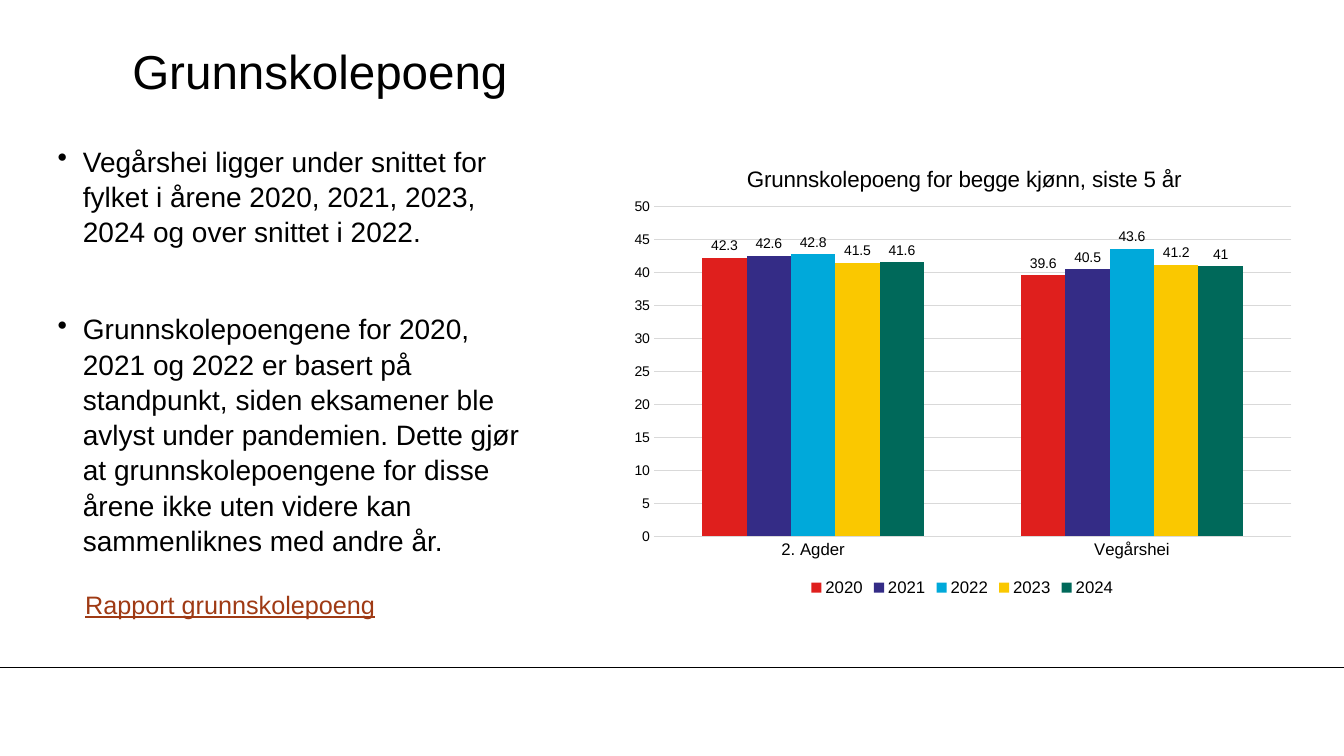
from lxml import etree
from pptx import Presentation
from pptx.chart.data import CategoryChartData
from pptx.dml.color import RGBColor
from pptx.enum.chart import XL_CHART_TYPE, XL_LABEL_POSITION, XL_LEGEND_POSITION, XL_TICK_MARK
from pptx.enum.shapes import MSO_CONNECTOR
from pptx.enum.text import MSO_ANCHOR
from pptx.oxml.ns import qn
from pptx.util import Emu, Pt

COLUMNS = XL_CHART_TYPE.COLUMN_CLUSTERED
OUTSIDE_END = XL_LABEL_POSITION.OUTSIDE_END
BOTTOM = XL_LEGEND_POSITION.BOTTOM
NO_TICKS = XL_TICK_MARK.NONE
STRAIGHT = MSO_CONNECTOR.STRAIGHT
TOP, MIDDLE = MSO_ANCHOR.TOP, MSO_ANCHOR.MIDDLE

BLACK = RGBColor(0x00, 0x00, 0x00)
GREY = RGBColor(0xD9, 0xD9, 0xD9)
RUST = RGBColor(0x9F, 0x3A, 0x14)
RED = RGBColor(0xDF, 0x1F, 0x1D)
INDIGO = RGBColor(0x34, 0x2C, 0x86)
BLUE = RGBColor(0x00, 0xA9, 0xDA)
YELLOW = RGBColor(0xFA, 0xC8, 0x00)
GREEN = RGBColor(0x00, 0x69, 0x5A)

DISTRICTS = ["2. Agder", "Vegårshei"]
YEARS = [
    ("2020", [42.3, 39.6], RED),
    ("2021", [42.6, 40.5], INDIGO),
    ("2022", [42.8, 43.6], BLUE),
    ("2023", [41.5, 41.2], YELLOW),
    ("2024", [41.6, 41], GREEN),
]
FINDINGS = [
    "Vegårshei ligger under snittet for fylket i årene 2020, 2021, 2023, "
    "2024 og over snittet i 2022.",
    "Grunnskolepoengene for 2020, 2021 og 2022 er basert på standpunkt, siden "
    "eksamener ble avlyst under pandemien. Dette gjør at grunnskolepoengene for "
    "disse årene ikke uten videre kan sammenliknes med andre år.",
]


def px(length):
    return Emu(length * 9525)


class SlideBuilder:
    font_name = "Arial"

    def __init__(self, slide):
        self.slide = slide

    def style(self, font, size, color=BLACK):
        font.name = self.font_name
        font.size = Pt(size)
        font.bold = False
        font.color.rgb = color

    def rule(self, left, right, y):
        divider = self.slide.shapes.add_connector(STRAIGHT, px(left), px(y), px(right), px(y))
        divider.line.color.rgb = BLACK
        divider.line.width = Pt(0.75)
        etree.SubElement(divider._element.spPr, qn("a:effectLst"))

    def frame(self, box, anchor=TOP, inset=0):
        frame = self.slide.shapes.add_textbox(*map(px, box)).text_frame
        frame.word_wrap = True
        frame.vertical_anchor = anchor
        frame.margin_left = frame.margin_right = px(inset)
        frame.margin_top = frame.margin_bottom = px(inset // 2)
        return frame

    def text(self, box, wording, size, color=BLACK, anchor=TOP, inset=0, underline=False):
        frame = self.frame(box, anchor, inset)
        frame.text = wording
        run = frame.paragraphs[0].runs[0]
        self.style(run.font, size, color)
        run.font.underline = underline

    def bullets(self, box, points, size, gap):
        frame = self.frame(box)
        frame.text = "\n".join(points)
        for index, paragraph in enumerate(frame.paragraphs):
            properties = paragraph._p.get_or_add_pPr()
            properties.set("marL", str(px(24)))
            properties.set("indent", str(px(-24)))
            etree.SubElement(properties, qn("a:buChar"), char="•")
            paragraph.line_spacing = 1.05
            if index:
                paragraph.space_before = Pt(gap)
            self.style(paragraph.runs[0].font, size)

    def place(self, parent, position, **fractions):
        for automatic in parent.findall(qn("c:layout")):
            parent.remove(automatic)
        layout = etree.Element(qn("c:layout"))
        manual = etree.SubElement(layout, qn("c:manualLayout"))
        if "w" in fractions:
            etree.SubElement(manual, qn("c:layoutTarget"), val="inner")
        for side in ("xMode", "yMode"):
            etree.SubElement(manual, qn("c:" + side), val="edge")
        for side, fraction in fractions.items():
            etree.SubElement(manual, qn("c:" + side), val=str(fraction))
        parent.insert(position, layout)

    def axis(self, axis, size):
        axis.major_tick_mark = axis.minor_tick_mark = NO_TICKS
        self.style(axis.tick_labels.font, size)

    def columns(self, box, title, categories, series_rows):
        data = CategoryChartData()
        data.categories = categories
        for name, values, _ in series_rows:
            data.add_series(name, values)
        chart = self.slide.shapes.add_chart(COLUMNS, *map(px, box), data).chart
        self.style(chart.font, 10)

        chart.has_title = True
        heading = chart.chart_title
        heading.text_frame.text = title
        self.style(heading.text_frame.paragraphs[0].runs[0].font, 16)
        heading.include_in_layout = False
        self.place(chart.element.find(".//" + qn("c:title")), 1, x=0.18, y=0.04)
        self.place(chart.element.find(".//" + qn("c:plotArea")), 0,
                   x=0.05, y=0.14, w=0.93, h=0.72)

        chart.has_legend = True
        chart.legend.position = BOTTOM
        chart.legend.include_in_layout = False
        self.style(chart.legend.font, 12)

        self.axis(chart.category_axis, 12)
        chart.category_axis.format.line.color.rgb = GREY
        chart.category_axis.format.line.width = Pt(0.75)
        scale = chart.value_axis
        self.axis(scale, 10)
        scale.minimum_scale, scale.maximum_scale, scale.major_unit = 0, 50, 5
        scale.format.line.fill.background()
        scale.major_gridlines.format.line.color.rgb = GREY
        scale.major_gridlines.format.line.width = Pt(0.75)

        plot = chart.plots[0]
        plot.gap_width = 219
        plot.overlap = 0
        plot.vary_by_categories = False
        for series, (_, _, color) in zip(plot.series, series_rows):
            series.format.fill.solid()
            series.format.fill.fore_color.rgb = color
            labels = series.data_labels
            labels.show_value = True
            labels.position = OUTSIDE_END
            self.style(labels.font, 10)


def main():
    deck = Presentation()
    deck.slide_width, deck.slide_height = px(1280), px(720)
    builder = SlideBuilder(deck.slides.add_slide(deck.slide_layouts[6]))
    builder.rule(0, 1280, 636)
    builder.text((126, 31, 1066, 72), "Grunnskolepoeng", 34, anchor=MIDDLE)
    builder.bullets((55, 136, 453, 363), FINDINGS, 20, gap=44)
    builder.text((71, 556, 317, 38), "Rapport grunnskolepoeng", 18, RUST, inset=10, underline=True)
    builder.columns((590, 136, 653, 436), "Grunnskolepoeng for begge kjønn, siste 5 år",
                    DISTRICTS, YEARS)
    deck.save("out.pptx")


if __name__ == "__main__":
    main()
